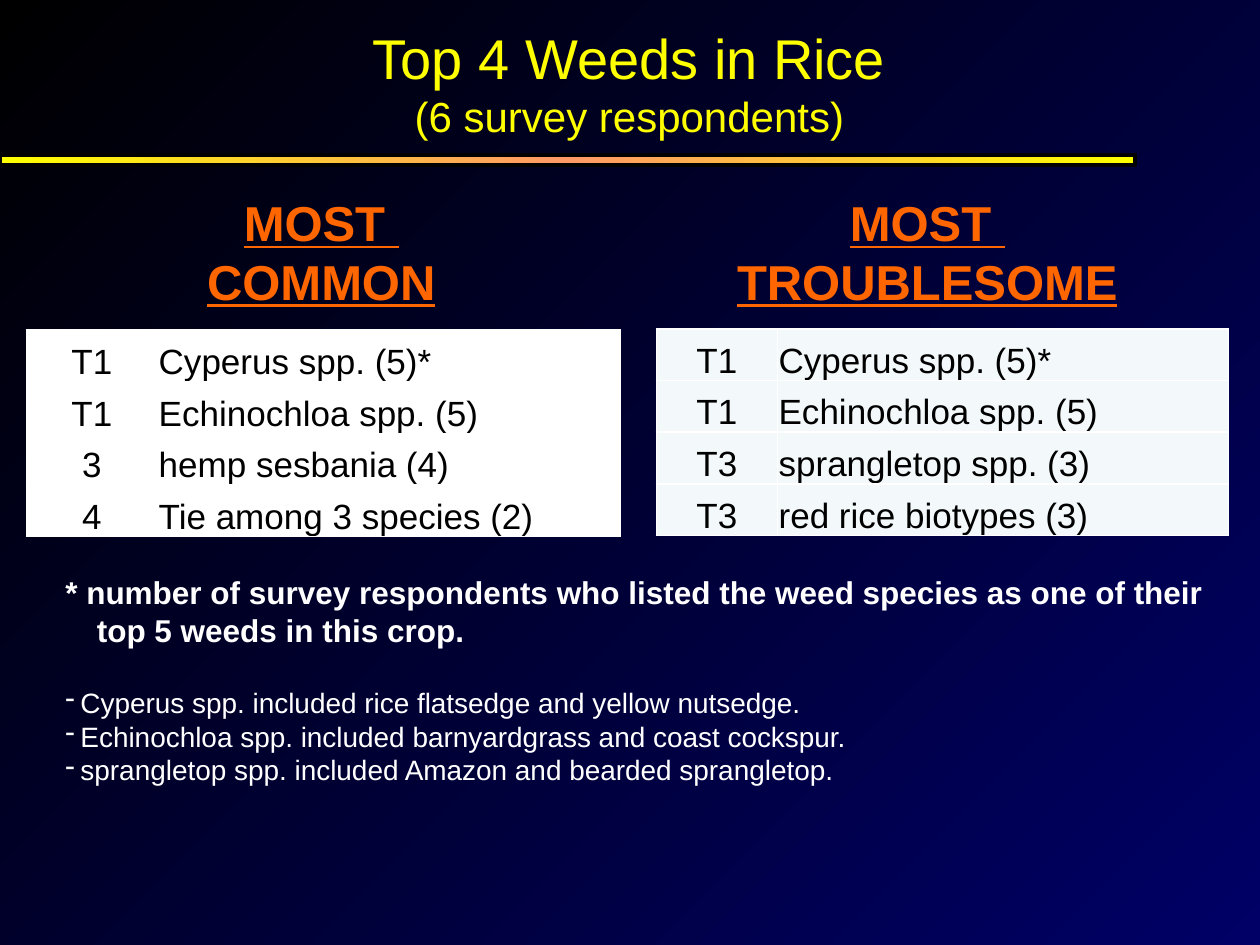
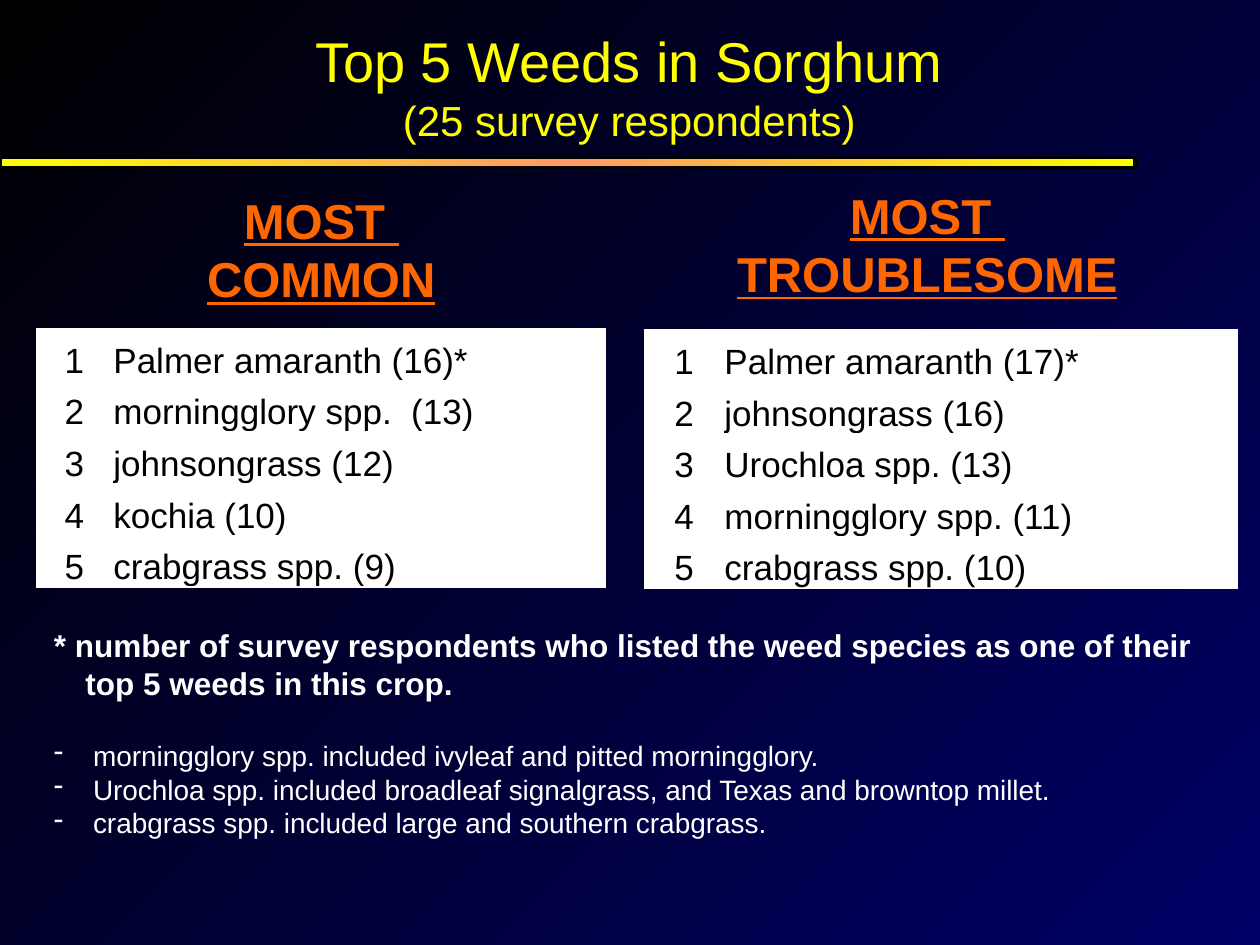
import pptx
import pptx.util
import pptx.dml.color
import pptx.enum.shapes
import pptx.enum.text
import pptx.oxml
import pptx.oxml.ns

Inches, Pt = pptx.util.Inches, pptx.util.Pt
RGB = pptx.dml.color.RGBColor
ALIGN = pptx.enum.text.PP_ALIGN
ANCHOR = pptx.enum.text.MSO_ANCHOR

# Content
NOTE = ("* number of survey respondents who listed the weed species "
        "as one of their top 5 weeds in this crop.")
HEADS = [("MOST ", "COMMON"), ("MOST ", "TROUBLESOME")]

# Each table: left, top, column widths, fill name, rows
SLIDES = [
    {
        "title": ("Top 4 Weeds in Rice", "(6 survey respondents)"),
        "top": 0.05, "bar": 1.23, "heads": (1.48, 1.48),
        "tables": [
            (0.21, 2.62, (1.04, 3.67), "plain", [
                ("T1", "Cyperus spp. (5)*"),
                ("T1", "Echinochloa spp. (5)"),
                ("3", "hemp sesbania (4)"),
                ("4", "Tie among 3 species (2)")]),
            (5.21, 2.61, (0.96, 3.58), "pale", [
                ("T1", "Cyperus spp. (5)*"),
                ("T1", "Echinochloa spp. (5)"),
                ("T3", "sprangletop spp. (3)"),
                ("T3", "red rice biotypes (3)")]),
        ],
        "notes": (0.42, 4.5), "indent": 0.12,
        "list": ["Cyperus spp. included rice flatsedge and yellow nutsedge.",
                 "Echinochloa spp. included barnyardgrass and coast cockspur.",
                 "sprangletop spp. included Amazon and bearded sprangletop."],
    },
    {
        "title": ("Top 5 Weeds in Sorghum", "(25 survey respondents)"),
        "top": 0.08, "bar": 1.25, "heads": (1.46, 1.42),
        "tables": [
            (0.29, 2.61, (0.6, 3.91), "plain", [
                ("1", "Palmer amaranth (16)*"),
                ("2", "morningglory spp.  (13)"),
                ("3", "johnsongrass (12)"),
                ("4", "kochia (10)"),
                ("5", "crabgrass spp. (9)")]),
            (5.12, 2.62, (0.62, 4.08), "plain", [
                ("1", "Palmer amaranth (17)*"),
                ("2", "johnsongrass (16)"),
                ("3", "Urochloa spp. (13)"),
                ("4", "morningglory spp. (11)"),
                ("5", "crabgrass spp. (10)")]),
        ],
        "notes": (0.33, 4.92), "indent": 0.31,
        "list": ["morningglory spp. included ivyleaf and pitted morningglory.",
                 "Urochloa spp. included broadleaf signalgrass, and Texas "
                 "and browntop millet.",
                 "crabgrass spp. included large and southern crabgrass."],
    },
]

# Shared look
BLACK, WHITE = RGB(0, 0, 0), RGB(255, 255, 255)
NAVY, YELLOW = RGB(0, 0, 0x66), RGB(255, 255, 0)
PEACH, ORANGE = RGB(0xFF, 0x99, 0x66), RGB(0xFF, 0x66, 0)
FILLS = {"plain": WHITE, "pale": RGB(0xF3, 0xF9, 0xFA)}
ROW = 0.41
BOXES = [(1.35, 2.4), (5.73, 3.26)]

TITLE = {"size": Pt(32), "color": YELLOW}
SUB = {"size": Pt(24), "color": YELLOW}
HEAD = {"size": Pt(28), "color": ORANGE, "bold": True, "underline": True}
CELL = {"size": Pt(20), "color": BLACK, "bold": False}
BOLD = {"size": Pt(18), "color": WHITE, "bold": True}
ITEM = {"size": Pt(16), "color": WHITE}


def node(xml):
    return pptx.oxml.parse_xml(
        xml.replace(" ", f" {pptx.oxml.ns.nsdecls('a')} ", 1))


def write(para, text, style, align=ALIGN.LEFT):
    para.alignment = align
    run = para.add_run()
    run.text = text
    for key, val in {"name": "Arial", **style}.items():
        if key == "color":
            run.font.color.rgb = val
        else:
            setattr(run.font, key, val)


def hang(para, size, mark=None):
    props = para._p.get_or_add_pPr()
    props.set("marL", str(Inches(size)))
    props.set("indent", str(-Inches(size)))
    if mark:
        props.append(node(f'<a:buChar char="{mark}"/>'))


def blend(fill, root, stops, angle):
    fill.gradient()
    fill.gradient_angle = (360 - angle) % 360
    group = root.xpath(".//a:gsLst")[0]
    for old in list(group):
        group.remove(old)
    for pos, color in stops:
        group.append(node(f'<a:gs pos="{pos * 1000}">'
                          f'<a:srgbClr val="{color}"/></a:gs>'))


def box(slide, left, top, width, height, wrap=True):
    shape = slide.shapes.add_textbox(*map(Inches, (left, top, width, height)))
    shape.text_frame.word_wrap = wrap
    return shape.text_frame


def lines(frame, parts):
    for i, (text, style) in enumerate(parts):
        para = frame.add_paragraph() if i else frame.paragraphs[0]
        write(para, text, style, ALIGN.CENTER)


def edge(cell):
    props = cell._tc.get_or_add_tcPr()
    for i, side in enumerate("LRTB"):
        props.insert(i, node(
            f'<a:ln{side} w="{Pt(1)}"><a:solidFill>'
            f'<a:srgbClr val="{WHITE}"/></a:solidFill></a:ln{side}>'))


def grid(slide, left, top, widths, fill, rows):
    table = slide.shapes.add_table(
        len(rows), len(widths), Inches(left), Inches(top),
        Inches(sum(widths)), Inches(ROW * len(rows))).table
    table.first_row = table.horz_banding = False
    for col, width in zip(table.columns, widths):
        col.width = Inches(width)
    pad = {"margin_left": Inches(0.01), "margin_right": Inches(0.01),
           "margin_top": Inches(0.01), "margin_bottom": 0,
           "vertical_anchor": ANCHOR.BOTTOM}
    for r, row in enumerate(rows):
        table.rows[r].height = Inches(ROW)
        for c, text in enumerate(row):
            cell = table.cell(r, c)
            for key, val in pad.items():
                setattr(cell, key, val)
            cell.fill.solid()
            cell.fill.fore_color.rgb = FILLS[fill]
            edge(cell)
            write(cell.text_frame.paragraphs[0], text, CELL,
                  ALIGN.LEFT if c else ALIGN.CENTER)


def notes(slide, spot, items, indent):
    frame = box(slide, *spot, 9.25, 1.82)
    first = frame.paragraphs[0]
    write(first, NOTE, BOLD)
    hang(first, 0.25)
    for i, text in enumerate(items):
        para = frame.add_paragraph()
        para.space_before = Pt(0 if i else 21)
        write(para, text, ITEM)
        hang(para, indent, "-")


def build(deck, data):
    slide = deck.slides.add_slide(deck.slide_layouts[6])
    blend(slide.background.fill, slide.element,
          [(0, BLACK), (100, NAVY)], 45)

    # Title and bar
    frame = box(slide, 0.33, data["top"], 9.33, 1.2)
    frame.vertical_anchor = ANCHOR.MIDDLE
    lines(frame, zip(data["title"], (TITLE, SUB)))
    bar = slide.shapes.add_shape(
        pptx.enum.shapes.MSO_SHAPE.RECTANGLE,
        *map(Inches, (0, data["bar"], 9.01, 0.08)))
    bar.shadow.inherit = False
    blend(bar.fill, bar.element, [(0, YELLOW), (50, PEACH), (100, YELLOW)], 0)
    bar.line.color.rgb = BLACK
    bar.line.width = Pt(2.25)

    # Headings, tables and notes
    for words, (left, width), top in zip(HEADS, BOXES, data["heads"]):
        frame = box(slide, left, top, width, 1.04, wrap=False)
        lines(frame, [(word, HEAD) for word in words])
    for table in data["tables"]:
        grid(slide, *table)
    notes(slide, data["notes"], data["list"], data["indent"])


def main():
    deck = pptx.Presentation()
    deck.slide_width, deck.slide_height = Inches(10), Inches(7.5)
    for data in SLIDES:
        build(deck, data)
    deck.save("out.pptx")


if __name__ == "__main__":
    main()
